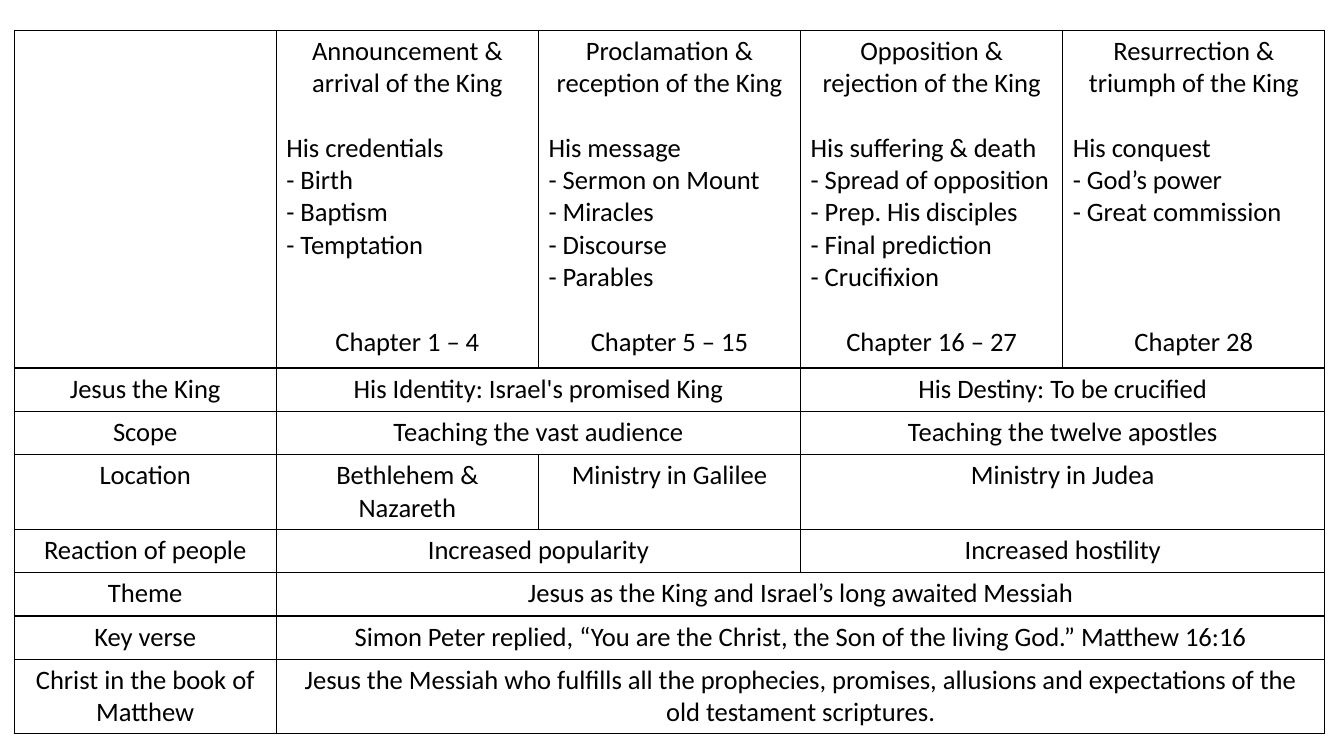
from lxml import etree
from pptx import Presentation
from pptx.dml.color import RGBColor
from pptx.enum.text import PP_ALIGN
from pptx.oxml.ns import qn
from pptx.util import Inches, Pt

CENTER, LEFT = PP_ALIGN.CENTER, PP_ALIGN.LEFT
FONT, SIZE, BLACK = "Calibri", 19, "000000"
LINE_PITCH = 23.2  # points taken by one line of text
LIST_LINES = 6  # lines between the heading gap and the chapter
COLUMN_WIDTH = 2.6
ROW_HEIGHTS = [3.35, 0.43, 0.43, 0.7, 0.43, 0.43, 0.43, 0.7]

# Heading, list, chapters
SECTIONS = [
    ("Announcement & arrival of the King",
     ["His credentials", "- Birth", "- Baptism", "- Temptation"],
     "Chapter 1 – 4"),
    ("Proclamation & reception of the King",
     ["His message", "- Sermon on Mount", "- Miracles", "- Discourse",
      "- Parables"],
     "Chapter 5 – 15"),
    ("Opposition & rejection of the King",
     ["His suffering & death", "- Spread of opposition",
      "- Prep. His disciples", "- Final prediction", "- Crucifixion"],
     "Chapter 16 – 27"),
    ("Resurrection & triumph of the King",
     ["His conquest", "- God’s power", "- Great commission"],
     "Chapter 28"),
]

# Each row: (text, columns spanned)
THEMES = [
    [("Jesus the King", 1), ("His Identity: Israel's promised King", 2),
     ("His Destiny: To be crucified", 2)],
    [("Scope", 1), ("Teaching the vast audience", 2),
     ("Teaching the twelve apostles", 2)],
    [("Location", 1), ("Bethlehem & Nazareth", 1),
     ("Ministry in Galilee", 1), ("Ministry in Judea", 2)],
    [("Reaction of people", 1), ("Increased popularity", 2),
     ("Increased hostility", 2)],
    [("Theme", 1),
     ("Jesus as the King and Israel’s long awaited Messiah", 4)],
    [("Key verse", 1),
     ("Simon Peter replied, “You are the Christ, the Son of the living God.” "
      "Matthew 16:16", 4)],
    [("Christ in the book of Matthew", 1),
     ("Jesus the Messiah who fulfills all the prophecies, promises, allusions "
      "and expectations of the old testament scriptures.", 4)],
]


def color(hex_string):
    return RGBColor.from_string(hex_string)


def style_cell(cell):
    """Give the cell thin black borders and no fill."""
    tc_pr = cell._tc.get_or_add_tcPr()
    for side in ("a:lnL", "a:lnR", "a:lnT", "a:lnB"):
        ln = etree.SubElement(tc_pr, qn(side), w=str(Pt(1)))
        fill = etree.SubElement(ln, qn("a:solidFill"))
        etree.SubElement(fill, qn("a:srgbClr"), val=BLACK)
    cell.fill.background()


def write_paragraph(p, text, align=CENTER, lines_before=0):
    p.text = text
    p.alignment = align
    p.space_before = Pt(lines_before * LINE_PITCH)
    p.font.name = FONT
    p.font.size = Pt(SIZE)
    p.font.color.rgb = color(BLACK)


def write_section(cell, heading, items, chapters):
    tf = cell.text_frame
    write_paragraph(tf.paragraphs[0], heading)
    for i, item in enumerate(items):
        write_paragraph(tf.add_paragraph(), item, LEFT, 1 if i == 0 else 0)
    write_paragraph(tf.add_paragraph(), chapters,
                    lines_before=LIST_LINES - len(items))


def write_spanned_row(table, row, entries):
    col = 0
    for text, span in entries:
        cell = table.cell(row, col)
        if span > 1:
            cell.merge(table.cell(row, col + span - 1))
        write_paragraph(cell.text_frame.paragraphs[0], text)
        col += span


def add_grid(slide):
    rows, cols = len(ROW_HEIGHTS), len(SECTIONS) + 1
    table = slide.shapes.add_table(
        rows, cols, Inches(0.14), Inches(0.3),
        Inches(cols * COLUMN_WIDTH), Inches(sum(ROW_HEIGHTS))).table
    table.first_row = table.horz_banding = False
    for column in table.columns:
        column.width = Inches(COLUMN_WIDTH)
    for row, height in zip(table.rows, ROW_HEIGHTS):
        row.height = Inches(height)
    for cell in table.iter_cells():
        style_cell(cell)
    return table


def main():
    prs = Presentation()
    prs.slide_width, prs.slide_height = Inches(13.33), Inches(7.5)
    slide = prs.slides.add_slide(prs.slide_layouts[6])
    table = add_grid(slide)

    # Top row: sections of the book
    for col, section in enumerate(SECTIONS, start=1):
        write_section(table.cell(0, col), *section)

    # Lower rows: themes across the sections
    for row, entries in enumerate(THEMES, start=1):
        write_spanned_row(table, row, entries)

    prs.save("out.pptx")


if __name__ == "__main__":
    main()
